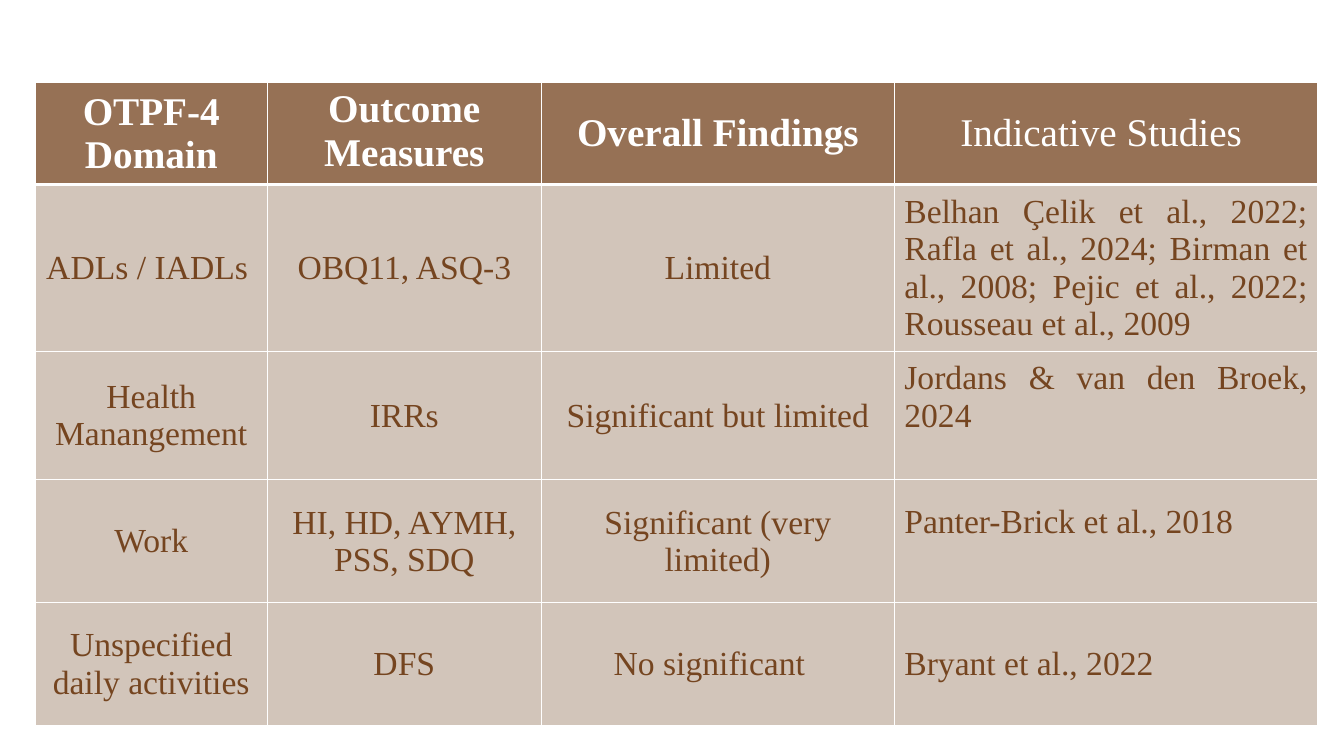
import pptx
import pptx.dml.color
import pptx.enum.text
import pptx.oxml.ns
import pptx.util
from lxml import etree

Inches = pptx.util.Inches
Pt = pptx.util.Pt
RGB = pptx.dml.color.RGBColor.from_string
ALIGN = pptx.enum.text.PP_ALIGN
ANCHOR = pptx.enum.text.MSO_ANCHOR
qn = pptx.oxml.ns.qn

FONT = "Times New Roman"
COLORS = {"brown": "754520", "dark_brown": "6A3F1D", "white": "FFFFFF"}
COL_WIDTHS = [2.3, 2.72, 3.5, 4.2]
ROW_HEIGHTS = [1.01, 1.66, 1.27, 1.22, 1.22]
ROWS = [
    ["OTPF-4 Domain", "Outcome Measures", "Overall Findings", "Indicative Studies "],
    ["ADLs / IADLs ", "OBQ11, ASQ-3", " Limited ",
     "Belhan Çelik et al., 2022; Rafla et al., 2024; Birman et al., 2008; "
     "Pejic et al., 2022; Rousseau et al., 2009"],
    ["Health Manangement", "IRRs", "Significant but limited",
     "Jordans & van den Broek, 2024"],
    ["Work", "HI, HD, AYMH, PSS, SDQ", "Significant (very limited)",
     "Panter-Brick et al., 2018"],
    ["Unspecified daily activities", "DFS", "No significant", "Bryant et al., 2022"],
]


def write_text(cell, text, size=24, color="brown", bold=True, align=ALIGN.CENTER,
               anchor=ANCHOR.MIDDLE):
    """Write one formatted paragraph into a cell."""
    cell.vertical_anchor = anchor
    p = cell.text_frame.paragraphs[0]
    p.alignment = align
    r = p.add_run()
    r.text = text
    r.font.name = FONT
    r.font.size = Pt(size)
    r.font.bold = bold
    r.font.color.rgb = RGB(COLORS[color])


def paint_cell(cell, color, opacity, bottom_width=1):
    """Give a cell a translucent fill and white borders."""
    cell.fill.solid()
    cell.fill.fore_color.rgb = RGB(COLORS[color])
    tc_pr = cell._tc.get_or_add_tcPr()
    srgb = tc_pr.find(qn("a:solidFill")).find(qn("a:srgbClr"))
    etree.SubElement(srgb, qn("a:alpha"), val=str(opacity * 1000))
    for i, side in enumerate("LRTB"):
        width = bottom_width if side == "B" else 1
        ln = etree.Element(qn(f"a:ln{side}"), w=str(Pt(width)))
        fill = etree.SubElement(ln, qn("a:solidFill"))
        etree.SubElement(fill, qn("a:srgbClr"), val=COLORS["white"])
        tc_pr.insert(i, ln)


def add_findings_table(slide, left, top, width, height):
    """Add the table of outcome measures and findings by domain."""
    table = slide.shapes.add_table(
        len(ROWS), len(COL_WIDTHS), Inches(left), Inches(top),
        Inches(width), Inches(height)).table
    table.first_row = True
    table.horz_banding = False
    for column, w in zip(table.columns, COL_WIDTHS):
        column.width = Inches(w)
    for row, h in zip(table.rows, ROW_HEIGHTS):
        row.height = Inches(h)
    for i, texts in enumerate(ROWS):
        for j, text in enumerate(texts):
            cell = table.cell(i, j)
            if i == 0:
                paint_cell(cell, "brown", 76, bottom_width=3)
                write_text(cell, text, size=28, color="white", bold=j < 3,
                           anchor=ANCHOR.TOP if j == 1 else ANCHOR.MIDDLE)
            else:
                paint_cell(cell, "dark_brown", 30)
                write_text(cell, text, bold=False,
                           align=ALIGN.JUSTIFY if j == 3 else ALIGN.CENTER)
    for i in (2, 3):
        table.cell(i, 3).margin_bottom = Inches(0.42)
    table.cell(4, 2).margin_right = Inches(0.27)


def main():
    """Build the slide and save it."""
    prs = pptx.Presentation()
    prs.slide_width = Inches(13.33)
    prs.slide_height = Inches(7.5)
    slide = prs.slides.add_slide(prs.slide_layouts[6])
    add_findings_table(slide, 0.35, 0.82, sum(COL_WIDTHS), sum(ROW_HEIGHTS))
    prs.save("out.pptx")


if __name__ == "__main__":
    main()
